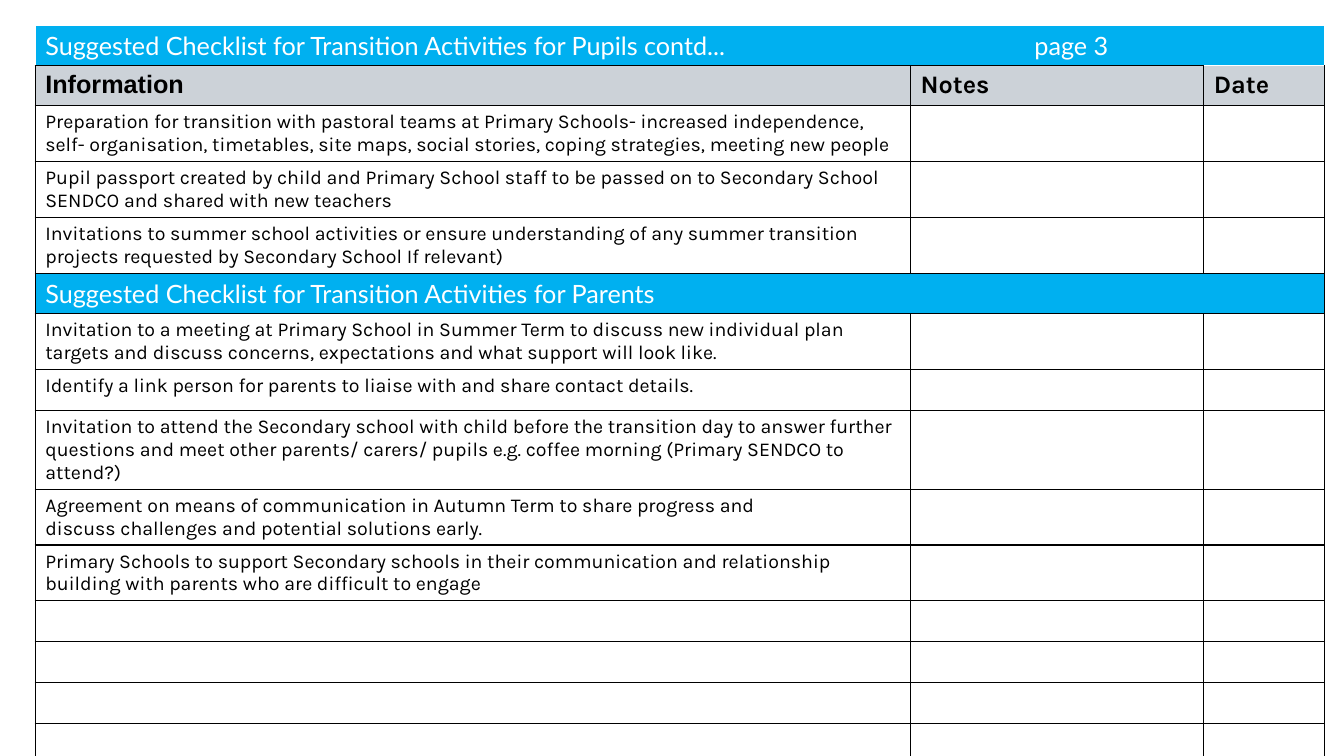
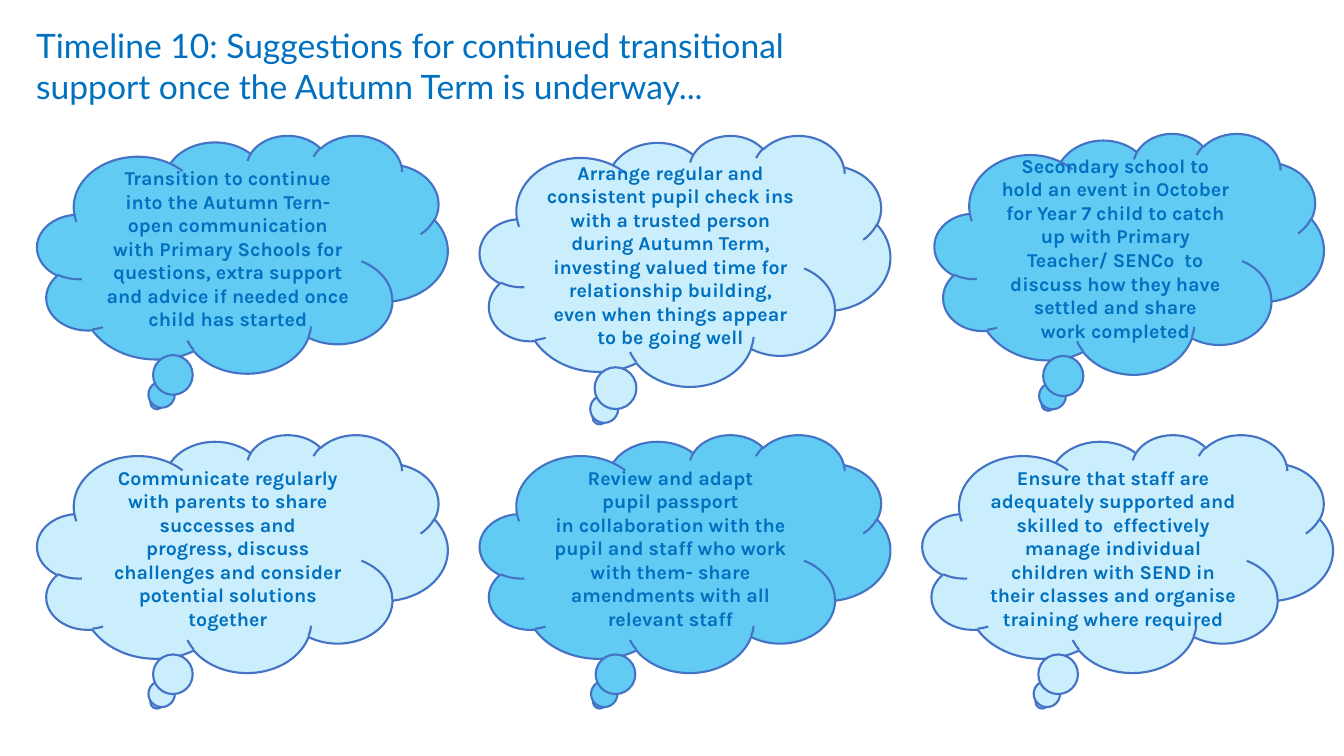
from lxml import etree
from pptx import Presentation
from pptx.dml.color import RGBColor
from pptx.enum.shapes import MSO_SHAPE
from pptx.enum.text import MSO_ANCHOR, PP_ALIGN
from pptx.oxml.ns import qn
from pptx.util import Inches, Pt

CLOUD = MSO_SHAPE.CLOUD_CALLOUT
CENTER = PP_ALIGN.CENTER
MIDDLE = MSO_ANCHOR.MIDDLE

WHITE = RGBColor(0xFF, 0xFF, 0xFF)
BLACK = RGBColor(0x00, 0x00, 0x00)
BAND_BLUE = RGBColor(0x00, 0xB0, 0xF0)
HEAD_GREY = RGBColor(0xCC, 0xD2, 0xD8)
TEXT_BLUE = RGBColor(0x00, 0x70, 0xC0)
CLOUD_FILLS = (RGBColor(0x61, 0xCB, 0xF4), RGBColor(0xCA, 0xEE, 0xFB))
CLOUD_LINE = RGBColor(0x44, 0x72, 0xC4)

TITLE_FONT, BODY_FONT, LABEL_FONT = "Lato", "Karla", "Arial"
NBSP = chr(160)

SLIDE_W, SLIDE_H = 13.33, 7.5
TABLE_LEFT, TABLE_TOP = 0.35, 0.25
COLUMNS = (8.68, 2.91, 1.2)
ROW_H = 0.4
PAGE_TAB = 9.81
EMPTY_ROWS = 4

CLOUD_LEFT, CLOUD_TOP = 0.37, 1.34
CLOUD_W, CLOUD_H = 4.07, 2.36
CLOUD_STEP_X, CLOUD_STEP_Y = 4.39, 2.97

PUPIL_BAND = "Suggested Checklist for Transition Activities for Pupils contd...\tpage 3"
PARENT_BAND = "Suggested Checklist for Transition Activities for Parents"
HEADINGS = (("Information", LABEL_FONT), ("Notes", BODY_FONT), ("Date", BODY_FONT))

# "_" in the wording below stands for a space that does not break
PUPIL_ITEMS = (
    "Preparation for transition with pastoral teams at Primary Schools- increased independence, "
    "self- organisation, timetables, site maps, social stories, coping strategies, meeting_new people",
    "Pupil passport created by child and Primary School staff to be passed on to Secondary_School "
    "SENDCO_and shared with new teachers",
    "Invitations to summer school activities or ensure understanding of any summer_transition "
    "projects requested by Secondary School If relevant)",
)
PARENT_ITEMS = (
    "Invitation to a meeting at Primary School in Summer Term to discuss new individual plan "
    "targets_and_discuss_concerns, expectations and what support will look like.",
    "Identify a link person for parents to liaise with and share contact details.",
    "Invitation to attend the Secondary school with child before the transition day to answer further "
    "questions and meet other parents/ carers/ pupils e.g. coffee_morning_(Primary SENDCO to attend?)",
    "Agreement on means of communication in Autumn Term to share_progress and "
    "discuss_challenges_and potential solutions early.",
    "Primary Schools to support Secondary schools in their communication and relationship "
    "building_with_parents who are difficult to engage",
)

TITLE = ("Timeline 10: Suggestions_for continued_transitional support "
         "once the_Autumn Term is underway...")
CLOUD_ROWS = (
    (
        "Transition to continue into the Autumn Tern- open communication with_Primary Schools_for "
        "questions, extra support and advice_if needed_once child_has started",
        "Arrange_regular and consistent_pupil check ins with_a trusted person during_Autumn Term, "
        "investing valued time_for relationship building, even when things_appear to be_going well",
        "Secondary school_to hold an event in October for_Year_7_child_to_catch up with_Primary "
        "Teacher/ SENCo_ to discuss_how they have settled and share work_completed",
    ),
    (
        "Communicate regularly with parents to_share successes and progress,_discuss challenges "
        "and_consider potential solutions together",
        "Review and adapt pupil_passport in_collaboration with_the pupil and_staff who work "
        "with_them- share amendments with_all relevant staff",
        "Ensure_that staff are adequately_supported and skilled to_ effectively manage_individual "
        "children with_SEND in their classes and_organise training where required",
    ),
)
CLOUD_SHIFTS = {(0, 1): (0, 0, 0, 0.13), (0, 2): (0.12, -0.02, -0.21, 0.03)}


def write(tf, text, font, size, color, bold=False, align=None):
    p = tf.paragraphs[0]
    p.text = text.replace("_", NBSP)
    if align is not None:
        p.alignment = align
    for r in p.runs:
        r.font.name = font
        r.font.size = Pt(size)
        r.font.bold = bold
        r.font.color.rgb = color
    return p


def set_borders(cell, **colors):
    tc_pr = cell._tc.get_or_add_tcPr()
    sides = [side for side in "LRTB" if side in colors]
    for place, side in enumerate(sides):
        ln = etree.Element(qn(f"a:ln{side}"), w=str(Pt(1)))
        fill = etree.SubElement(ln, qn("a:solidFill"))
        etree.SubElement(fill, qn("a:srgbClr"), val=str(colors[side]))
        tc_pr.insert(place, ln)


def fill_row(table, row, color, **borders):
    borders = borders or dict.fromkeys("LRTB", BLACK)
    cells = [table.cell(row, col) for col in range(len(COLUMNS))]
    for cell in cells:
        cell.fill.solid()
        cell.fill.fore_color.rgb = color
        set_borders(cell, **borders)
    return cells


def add_band(table, row, text, **borders):
    cells = fill_row(table, row, BAND_BLUE, **borders)
    cells[0].merge(cells[-1])
    return write(cells[0].text_frame, text, TITLE_FONT, 18, WHITE)


def add_tab_stop(p, position):
    tabs = etree.SubElement(p._p.get_or_add_pPr(), qn("a:tabLst"))
    etree.SubElement(tabs, qn("a:tab"), pos=str(Inches(position)), algn="l")


def add_headings(table, row):
    for cell, (text, font) in zip(fill_row(table, row, HEAD_GREY), HEADINGS):
        write(cell.text_frame, text, font, 18, BLACK, bold=True)
    cell._tc.tcPr.find(qn("a:lnT")).find(".//" + qn("a:srgbClr")).set("val", str(WHITE))


def add_items(table, first_row, items):
    for row, text in enumerate(items, first_row):
        cells = fill_row(table, row, WHITE)
        write(cells[0].text_frame, text, BODY_FONT, 14, BLACK)


def add_checklist(s):
    parent_row = 2 + len(PUPIL_ITEMS)
    rows = parent_row + 1 + len(PARENT_ITEMS) + EMPTY_ROWS
    table = s.shapes.add_table(
        rows, len(COLUMNS), Inches(TABLE_LEFT), Inches(TABLE_TOP),
        Inches(sum(COLUMNS)), Inches(rows * ROW_H)).table
    table.first_row = table.horz_banding = False
    for column, width in zip(table.columns, COLUMNS):
        column.width = Inches(width)
    for row in table.rows:
        row.height = Inches(ROW_H)
    add_tab_stop(add_band(table, 0, PUPIL_BAND, B=BLACK), PAGE_TAB)
    add_headings(table, 1)
    add_items(table, 2, PUPIL_ITEMS)
    add_band(table, parent_row, PARENT_BAND)
    add_items(table, parent_row + 1, PARENT_ITEMS + ("",) * EMPTY_ROWS)


def add_title(s, text):
    tf = s.shapes.add_textbox(Inches(0.26), Inches(0.2), Inches(8.32), Inches(0.91)).text_frame
    tf.word_wrap = True
    write(tf, text, TITLE_FONT, 24, TEXT_BLUE)


def add_cloud(s, row, col, text):
    dx, dy, dw, dh = CLOUD_SHIFTS.get((row, col), (0, 0, 0, 0))
    sp = s.shapes.add_shape(
        CLOUD,
        Inches(CLOUD_LEFT + col * CLOUD_STEP_X + dx),
        Inches(CLOUD_TOP + row * CLOUD_STEP_Y + dy),
        Inches(CLOUD_W + dw), Inches(CLOUD_H + dh))
    sp.shadow.inherit = False
    sp.fill.solid()
    sp.fill.fore_color.rgb = CLOUD_FILLS[(row + col) % 2]
    sp.line.color.rgb = CLOUD_LINE
    sp.line.width = Pt(1.5)
    tf = sp.text_frame
    tf.word_wrap = True
    tf.vertical_anchor = MIDDLE
    write(tf, text, BODY_FONT, 14, TEXT_BLUE, bold=True, align=CENTER)


def main():
    prs = Presentation()
    prs.slide_width, prs.slide_height = Inches(SLIDE_W), Inches(SLIDE_H)
    blank = prs.slide_layouts[6]

    add_checklist(prs.slides.add_slide(blank))

    s = prs.slides.add_slide(blank)
    add_title(s, TITLE)
    for row, texts in enumerate(CLOUD_ROWS):
        for col, text in enumerate(texts):
            add_cloud(s, row, col, text)

    prs.save("out.pptx")


if __name__ == "__main__":
    main()
